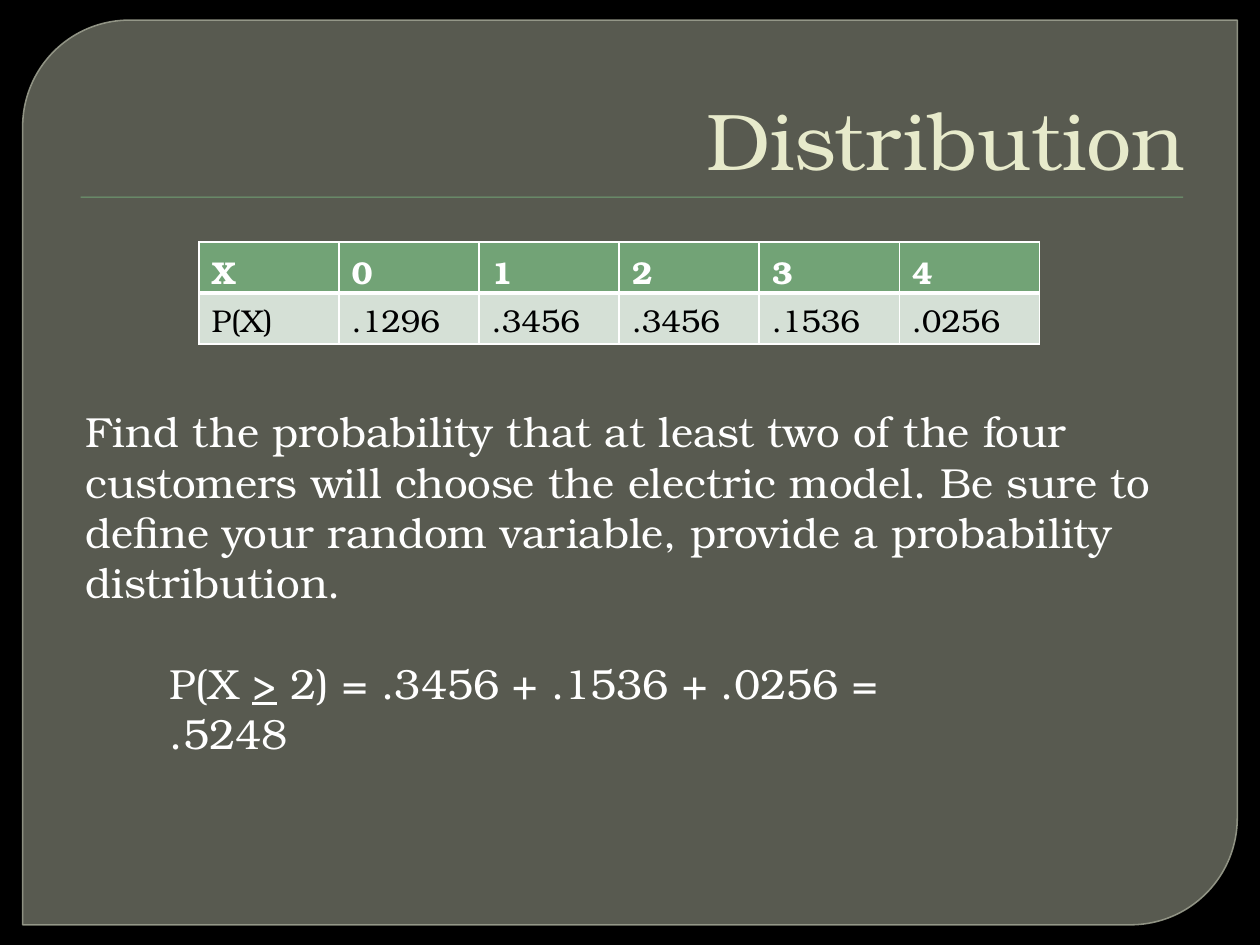
from dataclasses import dataclass

from lxml import etree
from pptx import Presentation
from pptx import util as u
from pptx.dml.color import RGBColor
from pptx.enum import shapes, text
from pptx.oxml import ns


@dataclass(frozen=True)
class Theme:
    font: str = "TeX Gyre Bonum"
    background: str = "000000"
    panel: str = "888B7B"
    panel_line: str = "9DA090"
    accent: str = "72A376"
    accent_light: str = "D5E0D6"
    title: str = "E7EACB"
    light: str = "FFFFFF"
    dark: str = "000000"
    title_size: int = 46
    body_size: int = 24
    table_size: int = 18


THEME = Theme()
DISTRIBUTION = [
    ("X", "0", "1", "2", "3", "4"),
    ("P(X)", ".1296", ".3456", ".3456", ".1536", ".0256"),
]


def box(*lengths):
    return [u.Inches(length) for length in lengths]


def paint(fill, color):
    fill.solid()
    fill.fore_color.rgb = RGBColor.from_string(color)


def set_alpha(fill, percent):
    color = fill._xPr.find(ns.qn("a:solidFill"))[0]
    etree.SubElement(color, ns.qn("a:alpha"), val=str(percent * 1000))


def write(paragraph, content, *, size, color, bold=False, underline=False):
    run = paragraph.add_run()
    run.text = content
    font = run.font
    font.name, font.size = THEME.font, u.Pt(size)
    font.bold, font.underline = bold, underline
    font.color.rgb = RGBColor.from_string(color)


def add_text(slide, place, content, *, size=THEME.body_size, color=THEME.light,
             align=text.PP_ALIGN.LEFT, anchor=text.MSO_ANCHOR.TOP, underlined=None):
    """Add a text box; the part of content equal to underlined is underlined."""
    frame = slide.shapes.add_textbox(*box(*place)).text_frame
    frame.word_wrap = True
    frame.vertical_anchor = anchor
    paragraph = frame.paragraphs[0]
    paragraph.alignment = align
    parts = content.partition(underlined) if underlined else (content,)
    for part in parts:
        write(paragraph, part, size=size, color=color, underline=part == underlined)


def add_panel(slide):
    panel = slide.shapes.add_shape(
        shapes.MSO_SHAPE.ROUND_2_DIAG_RECTANGLE, *box(0.18, 0.16, 9.64, 7.18))
    panel.adjustments[0], panel.adjustments[1] = 0.118, 0
    panel.shadow.inherit = False
    paint(panel.fill, THEME.panel)
    set_alpha(panel.fill, 65)
    paint(panel.line.fill, THEME.panel_line)
    set_alpha(panel.line.fill, 88)
    panel.line.width = u.Pt(0.87)


def add_title_rule(slide):
    rule = slide.shapes.add_shape(
        shapes.MSO_SHAPE.RECTANGLE, *box(0.64, 1.56, 8.75, 0.01))
    rule.shadow.inherit = False
    paint(rule.fill, THEME.accent)
    rule.line.fill.background()


def set_borders(cell, **widths):
    """Draw cell borders, with widths in points for the sides L, R, T and B."""
    properties = cell._tc.get_or_add_tcPr()
    for position, side in enumerate("LRTB"):
        line = etree.Element(ns.qn(f"a:ln{side}"), w=str(u.Pt(widths.get(side, 1))))
        fill = etree.SubElement(line, ns.qn("a:solidFill"))
        etree.SubElement(fill, ns.qn("a:srgbClr"), val=THEME.light)
        properties.insert(position, line)


def add_distribution_table(slide, rows):
    table = slide.shapes.add_table(
        len(rows), len(rows[0]), *box(1.58, 1.92, 6.67, 0.81)).table
    table.horz_banding = False
    for row_index, row in enumerate(rows):
        header = row_index == 0
        for column_index, value in enumerate(row):
            cell = table.cell(row_index, column_index)
            paint(cell.fill, THEME.accent if header else THEME.accent_light)
            set_borders(cell, **({"B": 3} if header else {"T": 3}))
            write(cell.text_frame.paragraphs[0], value, size=THEME.table_size,
                  color=THEME.light if header else THEME.dark, bold=header)


def main():
    presentation = Presentation()
    presentation.slide_width, presentation.slide_height = box(10, 7.5)
    slide = presentation.slides.add_slide(presentation.slide_layouts[6])
    paint(slide.background.fill, THEME.background)

    add_panel(slide)
    add_title_rule(slide)
    add_text(slide, (0.5, 0.28, 9, 1.25), "Distribution",
             size=THEME.title_size, color=THEME.title,
             align=text.PP_ALIGN.RIGHT, anchor=text.MSO_ANCHOR.BOTTOM)
    add_distribution_table(slide, DISTRIBUTION)
    add_text(slide, (0.58, 3.17, 9.08, 1.31),
             "Find the probability that at least two of the four customers will "
             "choose the electric model. Be sure to define your random variable, "
             "provide a probability distribution.")
    add_text(slide, (1.25, 5.17, 6.67, 0.5),
             "P(X > 2) = .3456 + .1536 + .0256 = .5248", underlined=">")
    presentation.save("out.pptx")


if __name__ == "__main__":
    main()
